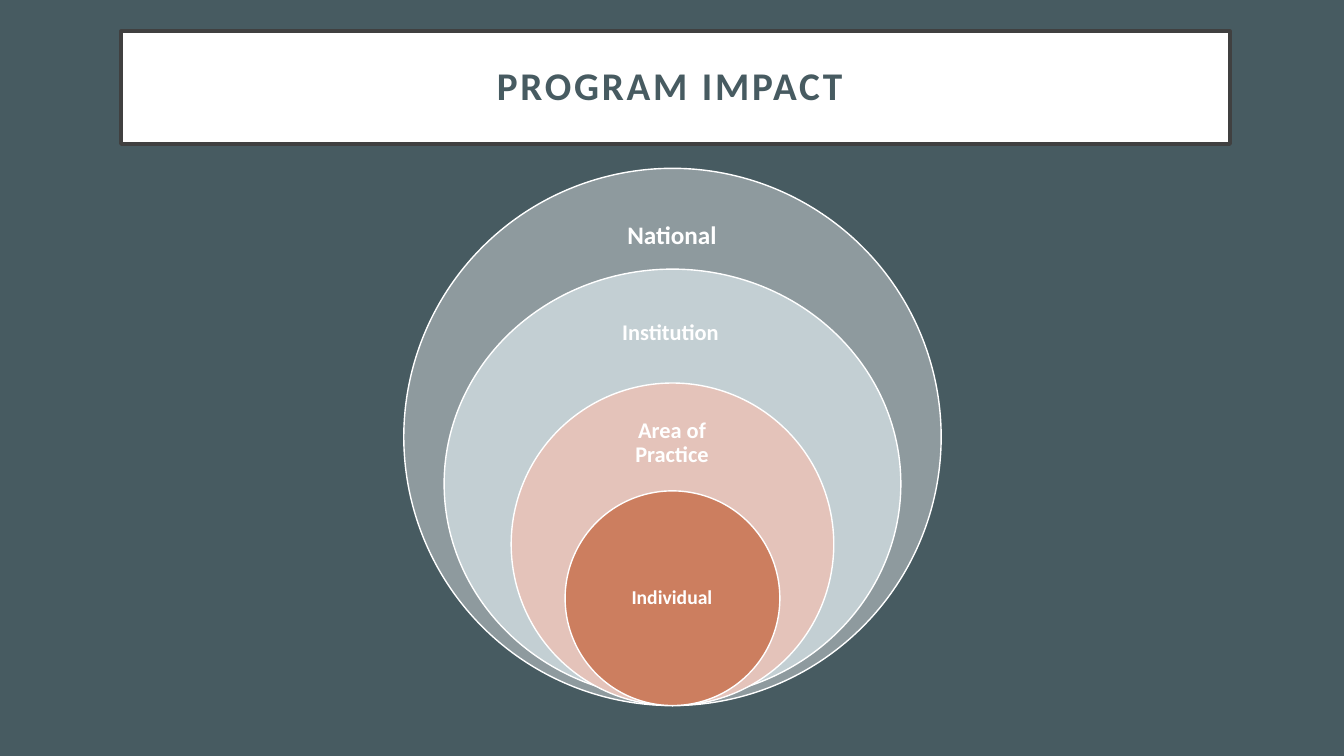
import pptx
import pptx.dml.color
import pptx.enum.shapes
import pptx.enum.text
import pptx.util

PX = 9144
SLATE = "475B61"
WHITE = "FFFFFF"
CENTER_X = 667

# name, ellipse (top, width, height), label (left, top, width, height), inset, size
RINGS = [
    ("National", "8E9A9E", (167, 533, 533), (592, 194, 149, 80), 14, 18),
    ("Institution", "C3CFD3", (267, 453, 426), (586, 292, 158, 77), 12, 16),
    ("Area of Practice", "E4C3BA", (380, 320, 320), (592, 404, 149, 72), 12, 16),
    ("Individual", "CC7E5F", (487, 213, 213), (591, 540, 151, 107), 11, 14),
]


def px(n):
    """Turn px into EMU."""
    return pptx.util.Emu(n * PX)


def rgb(value):
    """Turn a hex string into a colour."""
    return pptx.dml.color.RGBColor.from_string(value)


def apply(obj, formats):
    """Set each attribute named in a dict of format values."""
    for name, value in formats.items():
        setattr(obj, name, value)


def place(sp, left, top, width, height):
    """Position and size a shape."""
    apply(sp, {"left": px(left), "top": px(top), "width": px(width), "height": px(height)})


def paint(sp, fill, line, weight):
    """Give a shape a solid fill and outline."""
    sp.fill.solid()
    sp.fill.fore_color.rgb = rgb(fill)
    sp.line.color.rgb = rgb(line)
    sp.line.width = pptx.util.Pt(weight)


def write(sp, text, size, color, inset):
    """Write one centred bold paragraph and return its run."""
    tf = sp.text_frame
    sides = ("margin_left", "margin_top", "margin_right", "margin_bottom")
    apply(tf, dict.fromkeys(sides, px(inset)))
    apply(tf, {"word_wrap": True, "auto_size": pptx.enum.text.MSO_AUTO_SIZE.NONE,
               "vertical_anchor": pptx.enum.text.MSO_ANCHOR.MIDDLE})
    p = tf.paragraphs[0]
    apply(p, {"alignment": pptx.enum.text.PP_ALIGN.CENTER, "line_spacing": 0.9})
    r = p.add_run()
    r.text = text
    apply(r.font, {"name": "Calibri", "size": pptx.util.Pt(size), "bold": True})
    r.font.color.rgb = rgb(color)
    return r


def add_title(s, text):
    """Format the title placeholder as an outlined white banner."""
    sp = s.shapes.title
    place(sp, 120, 31, 1100, 112)
    paint(sp, WHITE, "404040", 2.5)
    r = write(sp, text, 28, SLATE, 20)
    r.font._element.set("spc", "200")


def add_ring(s, text, fill, ellipse, label, inset, size):
    """Add one ellipse centred on the common axis, with its label."""
    top, width, height = ellipse
    box = (px(CENTER_X - width / 2), px(top), px(width), px(height))
    sp = s.shapes.add_shape(pptx.enum.shapes.MSO_SHAPE.OVAL, *map(int, box))
    sp.shadow.inherit = False
    paint(sp, fill, WHITE, 1)
    tb = s.shapes.add_textbox(*map(px, label))
    write(tb, text, size, WHITE, inset)


def main():
    """Build the slide and save it."""
    prs = pptx.Presentation()
    apply(prs, {"slide_width": px(1333), "slide_height": px(750)})
    s = prs.slides.add_slide(prs.slide_layouts[5])
    s.background.fill.solid()
    s.background.fill.fore_color.rgb = rgb(SLATE)
    add_title(s, "PROGRAM IMPACT ")
    for ring in RINGS:
        add_ring(s, *ring)
    prs.save("out.pptx")


if __name__ == "__main__":
    main()
